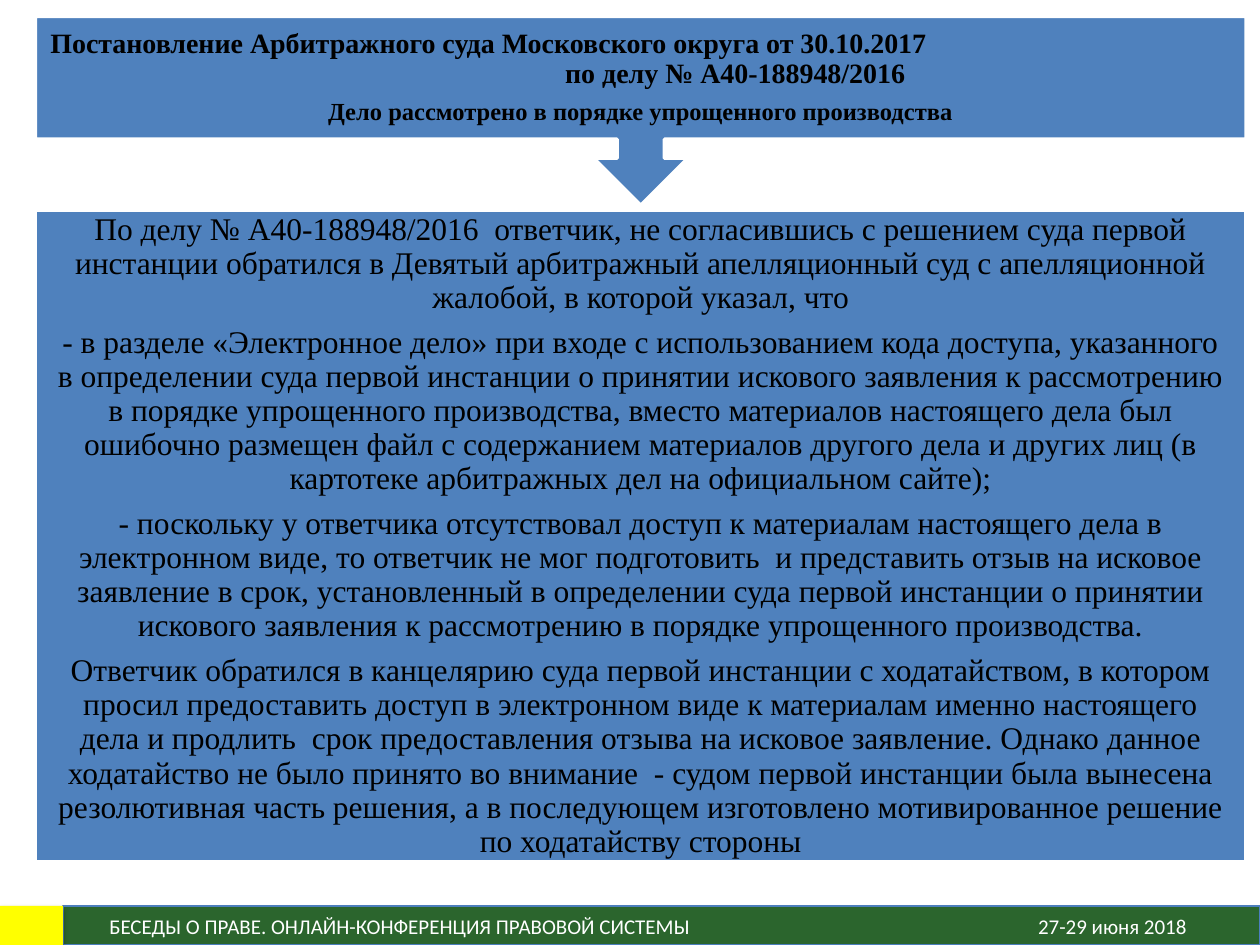
import dataclasses

import lxml.etree
import pptx
import pptx.dml.color
import pptx.enum.shapes
import pptx.enum.text
import pptx.oxml.ns
import pptx.util

Inches = pptx.util.Inches
Pt = pptx.util.Pt
SHAPE = pptx.enum.shapes.MSO_SHAPE
ALIGN = pptx.enum.text.PP_ALIGN
ANCHOR = pptx.enum.text.MSO_ANCHOR


@dataclasses.dataclass(frozen=True)
class Theme:
    blue: str = "4F81BD"
    green: str = "2B652D"
    green_edge: str = "4B7EBC"
    yellow: str = "FFFF00"
    white: str = "FFFFFF"
    black: str = "000000"
    serif: str = "Times New Roman"
    sans: str = "Calibri"
    body_size: int = 18
    title_size: int = 16
    subtitle_size: int = 14
    footer_size: int = 12


THEME = Theme()
BLOCK_LEFT, BLOCK_WIDTH = 0.28, 9.61
FOOTER_TOP, FOOTER_HEIGHT = 7.19, 0.31

CASE_TEXT = [
    "По делу № А40-188948/2016  ответчик, не согласившись с решением суда первой "
    "инстанции обратился в Девятый арбитражный апелляционный суд с апелляционной "
    "жалобой, в которой указал, что",
    "- в разделе «Электронное дело» при входе с использованием кода доступа, указанного "
    "в определении суда первой инстанции о принятии искового заявления к рассмотрению "
    "в порядке упрощенного производства, вместо материалов настоящего дела был "
    "ошибочно размещен файл с содержанием материалов другого дела и других лиц (в "
    "картотеке арбитражных дел на официальном сайте);",
    "- поскольку у ответчика отсутствовал доступ к материалам настоящего дела в "
    "электронном виде, то ответчик не мог подготовить  и представить отзыв на исковое "
    "заявление в срок, установленный в определении суда первой инстанции о принятии "
    "искового заявления к рассмотрению в порядке упрощенного производства.",
    "Ответчик обратился в канцелярию суда первой инстанции с ходатайством, в котором "
    "просил предоставить доступ в электронном виде к материалам именно настоящего "
    "дела и продлить  срок предоставления отзыва на исковое заявление. Однако данное "
    "ходатайство не было принято во внимание  - судом первой инстанции была вынесена "
    "резолютивная часть решения, а в последующем изготовлено мотивированное решение "
    "по ходатайству стороны",
]


def color(value):
    return pptx.dml.color.RGBColor.from_string(value)


def add_xml(parent, tag, **attributes):
    return lxml.etree.SubElement(parent, pptx.oxml.ns.qn(tag), **attributes)


def add_block(page, kind, left, top, width, height, fill, edge=None, edge_width=0):
    block = page.shapes.add_shape(
        kind, Inches(left), Inches(top), Inches(width), Inches(height))
    block.shadow.inherit = False
    block.fill.solid()
    block.fill.fore_color.rgb = color(fill)
    if edge:
        block.line.color.rgb = color(edge)
        block.line.width = Pt(edge_width)
    else:
        block.line.fill.background()
    return block


def add_shadow(block):
    effects = block.element.spPr.find(pptx.oxml.ns.qn("a:effectLst"))
    shadow = add_xml(effects, "a:outerShdw", blurRad=str(Pt(3.1)), dist=str(Pt(1.8)),
                     dir="5400000", rotWithShape="0")
    tint = add_xml(shadow, "a:srgbClr", val=THEME.black)
    add_xml(tint, "a:alpha", val="35000")


def add_text_box(page, left, top, width, height, inset, anchor=ANCHOR.MIDDLE):
    box = page.shapes.add_textbox(
        Inches(left), Inches(top), Inches(width), Inches(height))
    frame = box.text_frame
    frame.word_wrap = True
    frame.vertical_anchor = anchor
    frame.margin_left = frame.margin_right = Inches(inset)
    frame.margin_top = frame.margin_bottom = Inches(min(inset, 0.14))
    return frame


def write(frame, text, *, size, font=THEME.serif, ink=THEME.black, bold=False,
          align=ALIGN.CENTER, spacing=0.9, after=0, indent=0):
    para = frame.paragraphs[0]
    if para.runs:
        para = frame.add_paragraph()
    para.alignment = align
    para.line_spacing = spacing
    para.space_after = Pt(after)
    if indent:
        para._p.get_or_add_pPr().set("marL", str(Inches(indent)))
    span = para.add_run()
    span.text = text
    span.font.name = font
    span.font.size = Pt(size)
    span.font.bold = bold
    span.font.color.rgb = color(ink)
    return para


def add_footer(page):
    bar = add_block(page, SHAPE.RECTANGLE, 0.5, FOOTER_TOP, 9.5, FOOTER_HEIGHT,
                    THEME.green, THEME.green_edge, 0.75)
    corner = add_block(page, SHAPE.RECTANGLE, 0, FOOTER_TOP, 0.5, FOOTER_HEIGHT,
                       THEME.yellow)
    for block in (bar, corner):
        add_shadow(block)

    # The date stands at a tab stop
    frame = add_text_box(page, 0.77, 7.2, 8.84, 0.3, 0.1, ANCHOR.TOP)
    frame.margin_top = frame.margin_bottom = Inches(0.05)
    para = write(frame, "БЕСЕДЫ О ПРАВЕ. ОНЛАЙН-КОНФЕРЕНЦИЯ ПРАВОВОЙ СИСТЕМЫ\t27-29 июня 2018",
                 size=THEME.footer_size, font=THEME.sans, ink=THEME.white,
                 align=ALIGN.LEFT, spacing=1.0)
    stops = add_xml(para._p.get_or_add_pPr(), "a:tabLst")
    add_xml(stops, "a:tab", pos=str(Inches(7.37)), algn="l")


def add_case(page):
    add_block(page, SHAPE.RECTANGLE, BLOCK_LEFT, 1.67, BLOCK_WIDTH, 5.17,
              THEME.blue, THEME.white, 2)
    frame = add_text_box(page, BLOCK_LEFT, 1.67, BLOCK_WIDTH, 5.17, 0.14)
    for text in CASE_TEXT:
        write(frame, text, size=THEME.body_size, after=6.3)


def add_ruling(page):
    callout = add_block(page, SHAPE.UP_ARROW_CALLOUT, BLOCK_LEFT, 0.13, BLOCK_WIDTH, 1.5,
                        THEME.blue, THEME.white, 2)
    callout.rotation = 180
    frame = add_text_box(page, BLOCK_LEFT, 0.13, BLOCK_WIDTH, 0.97, 0.12)
    write(frame, "Постановление Арбитражного суда Московского округа от 30.10.2017",
          size=THEME.title_size, bold=True, align=ALIGN.LEFT)
    write(frame, "по делу № А40-188948/2016",
          size=THEME.title_size, bold=True, after=5.6, indent=1.5)
    write(frame, "Дело рассмотрено в порядке упрощенного производства",
          size=THEME.subtitle_size, bold=True, after=4.9)


def main():
    deck = pptx.Presentation()
    deck.slide_width, deck.slide_height = Inches(10), Inches(7.5)
    page = deck.slides.add_slide(deck.slide_layouts[6])
    add_footer(page)
    add_case(page)
    add_ruling(page)
    deck.save("out.pptx")


if __name__ == "__main__":
    main()
